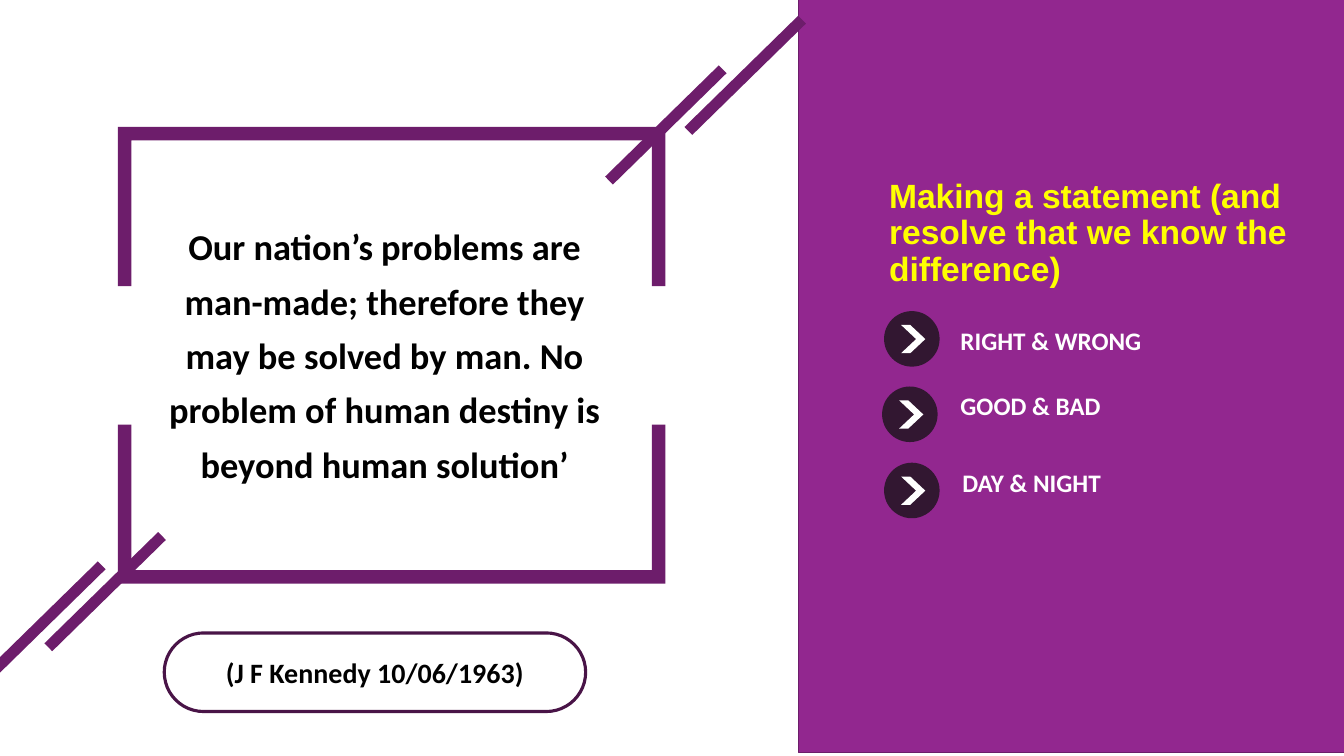
"""Build the quotation slide with its purple statement panel."""
from dataclasses import dataclass

from lxml import etree
from pptx import Presentation
from pptx.dml.color import RGBColor
from pptx.enum.shapes import MSO_SHAPE
from pptx.enum.text import MSO_ANCHOR, MSO_AUTO_SIZE, PP_ALIGN
from pptx.oxml.ns import qn
from pptx.shapes.autoshape import Shape
from pptx.slide import Slide
from pptx.text.text import TextFrame
from pptx.util import Cm, Pt

RECTANGLE = MSO_SHAPE.RECTANGLE
PILL = MSO_SHAPE.ROUNDED_RECTANGLE
CIRCLE = MSO_SHAPE.OVAL
CHEVRON = MSO_SHAPE.CHEVRON
MIDDLE, TOP = MSO_ANCHOR.MIDDLE, MSO_ANCHOR.TOP
LEFT, CENTER = PP_ALIGN.LEFT, PP_ALIGN.CENTER
NO_AUTOFIT = MSO_AUTO_SIZE.NONE


@dataclass(frozen=True)
class Theme:
    panel: str = "92278F"
    panel_edge: str = "6C1D6A"
    frame: str = "6D1D6B"
    pill_edge: str = "491447"
    badge: str = "321731"
    white: str = "FFFFFF"
    black: str = "000000"
    heading: str = "FFFF00"
    heading_font: str = "Arial"
    text_font: str = "Calibri"
    quote_size: float = 26
    heading_size: float = 24
    caption_size: float = 20
    list_size: float = 18


@dataclass(frozen=True)
class Area:
    left: float
    top: float
    width: float
    height: float


@dataclass(frozen=True)
class TextStyle:
    size: float
    color: str
    font: str
    align: PP_ALIGN = LEFT
    line_spacing: float = 1.0


@dataclass(frozen=True)
class Line:
    text: str
    space_before: float = 0
    indent: float = 0


@dataclass(frozen=True)
class Bracket:
    edge: float
    direction: int


@dataclass(frozen=True)
class Slash:
    center_x: float
    center_y: float


@dataclass(frozen=True)
class Badge:
    left: float
    top: float


THEME = Theme()
FRAME_LEFT, FRAME_RIGHT = 2.97, 16.77
BAR, ARM = 0.34, 4.01
SLASH_WIDTH, SLASH_ANGLE = 0.28, 45.6
BADGE_SIZE = 1.4

BRACKETS = [Bracket(14.71, -1), Bracket(3.2, 1)]
SLASHES = [Slash(16.78, 3.15), Slash(2.65, 14.91), Slash(18.78, 1.9), Slash(1.13, 15.65)]
BADGES = [Badge(22.28, 7.84), Badge(22.23, 9.74), Badge(22.28, 11.66)]
QUOTE = [
    Line("Our nation’s problems are"),
    Line("man-made; therefore they", 4.6),
    Line("may be solved by man. No", 4.6),
    Line("problem of human destiny is", 4.6),
    Line("beyond human solution’", 4.6),
]
CHOICES = [Line("RIGHT & WRONG"), Line("GOOD & BAD", 25), Line("DAY & NIGHT", 33, 0.05)]
HEADING = [Line("Making a statement (and resolve that we know the difference)")]
CAPTION = [Line("(J F Kennedy 10/06/1963)")]


def place(box: Shape, area: Area) -> None:
    box.left, box.top = Cm(area.left), Cm(area.top)
    box.width, box.height = Cm(area.width), Cm(area.height)


def paint(shape: Shape, color: str) -> None:
    shape.shadow.inherit = False
    shape.fill.solid()
    shape.fill.fore_color.rgb = RGBColor.from_string(color)
    shape.line.fill.background()


def outline(shape: Shape, color: str, width: float) -> None:
    shape.line.color.rgb = RGBColor.from_string(color)
    shape.line.width = Pt(width)


def add_block(page: Slide, kind: MSO_SHAPE, area: Area, color: str) -> Shape:
    block = page.shapes.add_shape(
        kind, Cm(area.left), Cm(area.top), Cm(area.width), Cm(area.height)
    )
    paint(block, color)
    return block


def write(frame: TextFrame, lines: list[Line], style: TextStyle, anchor: MSO_ANCHOR) -> None:
    frame.word_wrap = True
    frame.auto_size = NO_AUTOFIT
    frame.vertical_anchor = anchor
    for index, line in enumerate(lines):
        para = frame.add_paragraph() if index else frame.paragraphs[0]
        para.alignment = style.align
        para.line_spacing = style.line_spacing
        para.space_before = Pt(line.space_before)
        properties = para._p.get_or_add_pPr()
        properties.set("marL", str(Cm(line.indent)))
        properties.set("indent", "0")
        etree.SubElement(properties, qn("a:buNone"))
        span = para.add_run()
        span.text = line.text
        span.font.name = style.font
        span.font.size = Pt(style.size)
        span.font.bold = True
        span.font.color.rgb = RGBColor.from_string(style.color)


def add_bracket(page: Slide, bracket: Bracket) -> None:
    inner = bracket.edge + bracket.direction * BAR
    tip = bracket.edge + bracket.direction * ARM
    corners = [
        (FRAME_RIGHT, bracket.edge), (FRAME_RIGHT, tip), (FRAME_RIGHT - BAR, tip),
        (FRAME_RIGHT - BAR, inner), (FRAME_LEFT + BAR, inner),
        (FRAME_LEFT + BAR, tip), (FRAME_LEFT, tip),
    ]
    builder = page.shapes.build_freeform(Cm(FRAME_LEFT), Cm(bracket.edge))
    builder.add_line_segments([(Cm(x), Cm(y)) for x, y in corners], close=True)
    paint(builder.convert_to_shape(), THEME.frame)


def add_slash(page: Slide, slash: Slash) -> None:
    area = Area(slash.center_x - SLASH_WIDTH / 2, slash.center_y - ARM / 2, SLASH_WIDTH, ARM)
    add_block(page, RECTANGLE, area, THEME.frame).rotation = SLASH_ANGLE


def add_badge(page: Slide, badge: Badge) -> None:
    add_block(page, CIRCLE, Area(badge.left, badge.top, BADGE_SIZE, BADGE_SIZE), THEME.badge)
    arrow_area = Area(badge.left + 0.43, badge.top + 0.35, 0.61, 0.71)
    add_block(page, CHEVRON, arrow_area, THEME.white).adjustments[0] = 0.62


def main() -> None:
    deck = Presentation()
    deck.slide_width, deck.slide_height = Cm(33.87), Cm(19.05)
    page = deck.slides.add_slide(deck.slide_layouts[1])
    heading, choices = page.placeholders

    panel = add_block(page, RECTANGLE, Area(20.12, -0.08, 13.82, 19.05), THEME.panel)
    outline(panel, THEME.panel_edge, 1)
    for bracket in BRACKETS:
        add_bracket(page, bracket)
    for slash in SLASHES:
        add_slash(page, slash)

    quote = page.shapes.add_textbox(Cm(3.63), Cm(5.44), Cm(12.14), Cm(6.9))
    quote_style = TextStyle(THEME.quote_size, THEME.black, THEME.text_font, CENTER, 1.1)
    write(quote.text_frame, QUOTE, quote_style, MIDDLE)

    pill = add_block(page, PILL, Area(4.14, 15.95, 10.62, 1.98), THEME.white)
    pill.adjustments[0] = 0.5
    pill.fill.background()
    outline(pill, THEME.pill_edge, 2.25)
    caption_style = TextStyle(THEME.caption_size, THEME.black, THEME.text_font, CENTER)
    write(pill.text_frame, CAPTION, caption_style, MIDDLE)

    for badge in BADGES:
        add_badge(page, badge)

    for holder in (choices, heading):
        holder.element.getparent().append(holder.element)
    place(choices, Area(23.95, 8.07, 6.05, 4.6))
    choices_style = TextStyle(THEME.list_size, THEME.white, THEME.text_font)
    write(choices.text_frame, CHOICES, choices_style, TOP)
    place(heading, Area(22.15, 4.22, 12.8, 3.35))
    heading_style = TextStyle(THEME.heading_size, THEME.heading, THEME.heading_font, LEFT, 0.9)
    write(heading.text_frame, HEADING, heading_style, MIDDLE)

    deck.save("out.pptx")


if __name__ == "__main__":
    main()
